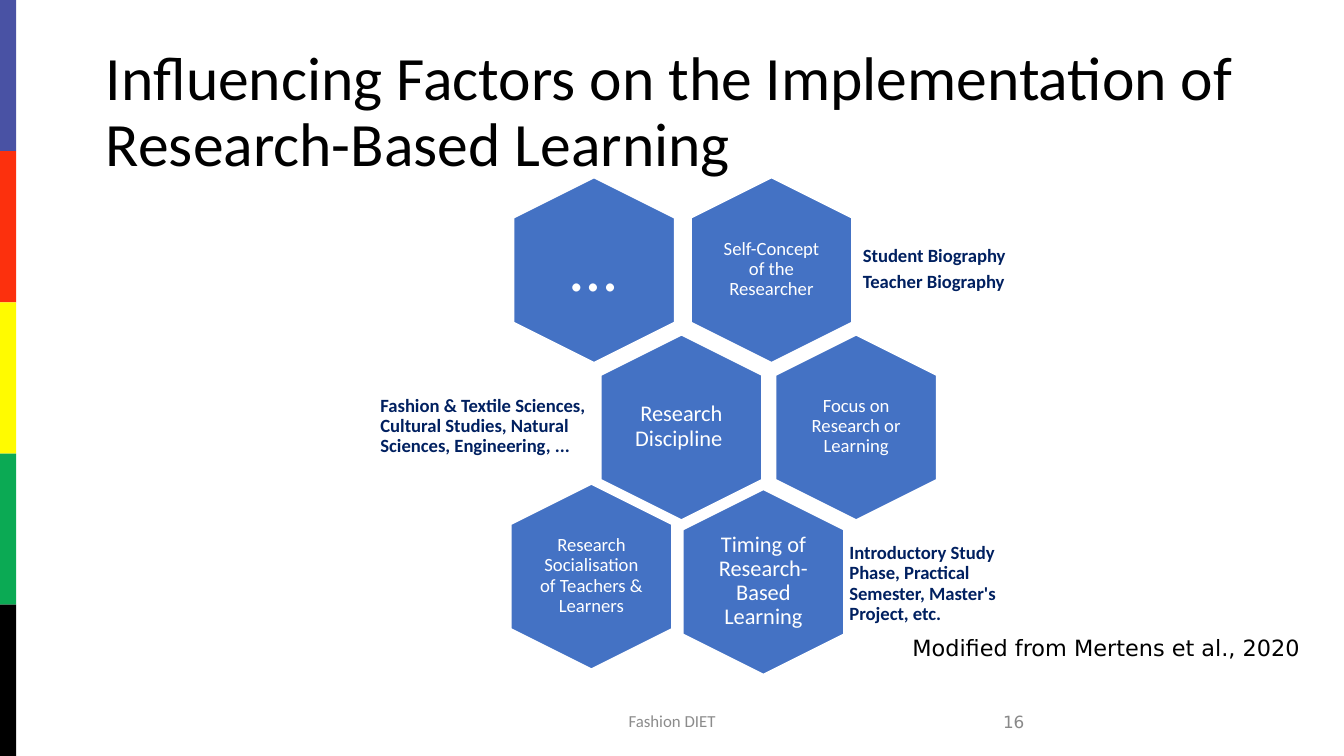
import pptx
import pptx.dml.color
import pptx.enum.shapes
import pptx.enum.text
import pptx.util

Inches = pptx.util.Inches
Pt = pptx.util.Pt
ALIGN = pptx.enum.text.PP_ALIGN
ANCHOR = pptx.enum.text.MSO_ANCHOR
SHAPE = pptx.enum.shapes.MSO_SHAPE

SLIDE_WIDTH = 10
SLIDE_HEIGHT = SLIDE_WIDTH * 9 / 16


def color(hex_string):
    return pptx.dml.color.RGBColor.from_string(hex_string)


def add_text(text, left, top, width, height, size=10, font="Calibri", fill="000000",
             bold=False, align=ALIGN.LEFT, anchor=ANCHOR.MIDDLE,
             inset=None, spacing=0.9, after=0):
    """Add a wrapped text box, one paragraph per line of text; an inset of None keeps the defaults."""
    box = slide.shapes.add_textbox(Inches(left), Inches(top), Inches(width), Inches(height))
    frame = box.text_frame
    frame.word_wrap = True
    frame.vertical_anchor = anchor
    if inset is not None:
        frame.margin_left = frame.margin_right = Inches(inset)
        frame.margin_top = frame.margin_bottom = Inches(inset)
    frame.text = text
    for para in frame.paragraphs:
        para.alignment = align
        para.line_spacing = spacing
        para.space_after = Pt(after)
        for span in para.runs:
            span.font.size = Pt(size)
            span.font.name = font
            span.font.bold = bold
            span.font.color.rgb = color(fill)


deck = pptx.Presentation()
deck.slide_width = Inches(SLIDE_WIDTH)
deck.slide_height = Inches(SLIDE_HEIGHT)
slide = deck.slides.add_slide(deck.slide_layouts[6])

# Coloured stripe down the left edge
stripe_colors = ["4952A4", "FC300D", "FFFB00", "0BAA54", "000000"]
stripe_height = SLIDE_HEIGHT / len(stripe_colors)
for index, stripe_color in enumerate(stripe_colors):
    stripe = slide.shapes.add_shape(SHAPE.RECTANGLE, 0, Inches(index * stripe_height),
                                    Inches(0.12), Inches(stripe_height))
    stripe.shadow.inherit = False
    stripe.fill.solid()
    stripe.fill.fore_color.rgb = color(stripe_color)
    stripe.line.fill.background()

# Title, footer and source
add_text("Influencing Factors on the Implementation of Research-Based Learning",
         0.69, 0.3, 8.62, 1.09, size=33)
add_text("Fashion DIET", 3.31, 5.21, 3.38, 0.3, size=9, fill="8C8C8C",
         align=ALIGN.CENTER, spacing=1)
add_text("16", 5.47, 5.22, 2.25, 0.3, size=9, font="DejaVu Sans", fill="898989",
         align=ALIGN.RIGHT, spacing=1)
add_text("Modified from Mertens et al., 2020", 6.69, 4.67, 3.12, 0.3, size=12,
         font="DejaVu Sans", anchor=ANCHOR.TOP, spacing=1)

# Honeycomb: label, left, top, text size, inset
factors = [
    ("Self-Concept of the Researcher", 5.05, 1.41, 10, 0.04),
    ("…", 3.73, 1.41, 36, 0),
    ("Research Discipline ", 4.38, 2.58, 12, 0.05),
    ("Focus on Research or Learning", 5.68, 2.58, 10, 0),
    ("Timing of Research-Based Learning", 4.99, 3.73, 12, 0.05),
    ("Research Socialisation of Teachers & Learners", 3.71, 3.69, 10, 0),
]
for label, left, top, size, inset in factors:
    hexagon = slide.shapes.add_shape(SHAPE.HEXAGON, Inches(left), Inches(top),
                                     Inches(1.38), Inches(1.2))
    hexagon.rotation = 90
    hexagon.adjustments[0] = 0.25
    hexagon.adjustments[1] = 1.155
    hexagon.shadow.inherit = False
    hexagon.fill.solid()
    hexagon.fill.fore_color.rgb = color("4472C4")
    hexagon.line.color.rgb = color("FFFFFF")
    hexagon.line.width = Pt(1)
    # The label is a separate box so that it stays upright on the turned hexagon
    add_text(label, left + 0.28, top + 0.12, 0.82, 0.95, size=size, fill="FFFFFF",
             align=ALIGN.CENTER, inset=inset)

# Notes beside the hexagons
side_notes = [
    ("Student Biography\nTeacher Biography", 6.38, 1.59, 1.54, 0.83),
    ("Fashion & Textile Sciences, Cultural Studies, Natural Sciences, Engineering, ...",
     2.79, 2.59, 1.78, 1.17),
    ("Introductory Study Phase, Practical Semester, Master's Project, etc.",
     6.28, 3.93, 1.54, 0.83),
]
for note, left, top, width, height in side_notes:
    add_text(note, left, top, width, height, fill="002060", bold=True, inset=0.04, after=3.5)

deck.save("out.pptx")
